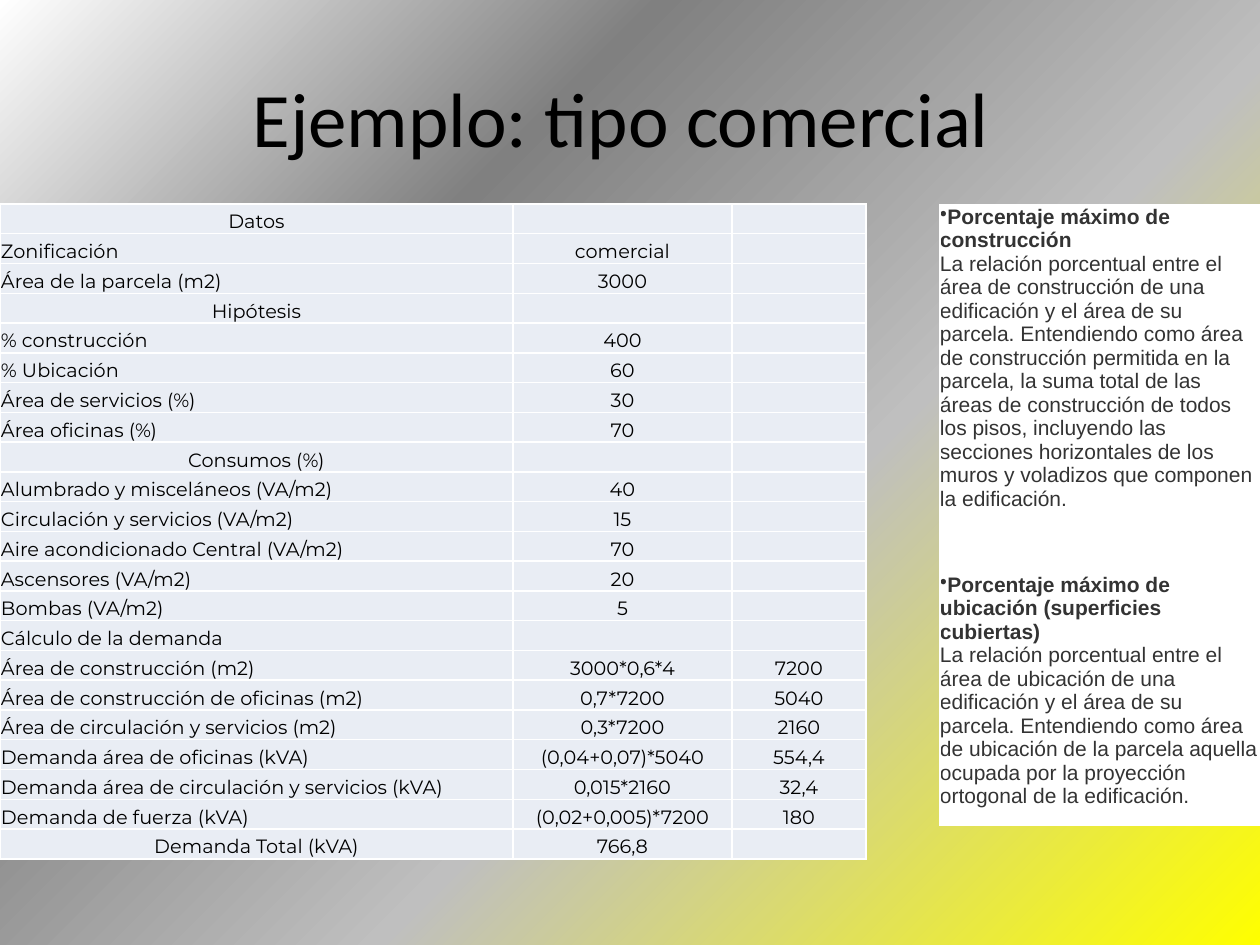
from copy import deepcopy

from pptx import Presentation
from pptx.dml.color import RGBColor
from pptx.enum.text import MSO_ANCHOR as Anchor, PP_ALIGN as Align
from pptx.oxml import parse_xml
from pptx.oxml.ns import nsdecls
from pptx.util import Emu, Pt

SCALE = 914400 / 126
COLORS = {
    "black": "000000", "white": "FFFFFF", "text": "333333", "cell": "E9EDF4",
    "yellow": "FFFF00", "silver": "BFBFBF", "gray": "808080",
}
TITLE_FONT = {"name": "Calibri", "size": Pt(44), "color": "black"}
DATA_FONT = {"name": "Montserrat", "size": Pt(11), "color": "black"}
NOTE_FONT = {"name": "Arial", "size": Pt(12), "color": "text"}

# A label written in centre alignment is a section heading.
HEADINGS = {"Datos", "Hipótesis", "Consumos (%)", "Demanda Total (kVA)"}
ROWS = [
    ("Datos", "", ""),
    ("Zonificación", "comercial", ""),
    ("Área de la parcela (m2)", "3000", ""),
    ("Hipótesis", "", ""),
    ("% construcción", "400", ""),
    ("% Ubicación", "60", ""),
    ("Área de servicios (%)", "30", ""),
    ("Área oficinas (%)", "70", ""),
    ("Consumos (%)", "", ""),
    ("Alumbrado y misceláneos (VA/m2)", "40", ""),
    ("Circulación y servicios (VA/m2)", "15", ""),
    ("Aire acondicionado Central (VA/m2)", "70", ""),
    ("Ascensores (VA/m2)", "20", ""),
    ("Bombas (VA/m2)", "5", ""),
    ("Cálculo de la demanda", "", ""),
    ("Área de construcción (m2)", "3000*0,6*4", "7200"),
    ("Área de construcción de oficinas (m2)", "0,7*7200", "5040"),
    ("Área de circulación y servicios (m2)", "0,3*7200", "2160"),
    ("Demanda área de oficinas (kVA)", "(0,04+0,07)*5040", "554,4"),
    ("Demanda área de circulación y servicios (kVA)", "0,015*2160", "32,4"),
    ("Demanda de fuerza (kVA)", "(0,02+0,005)*7200", "180"),
    ("Demanda Total (kVA)", "766,8", ""),
]
NOTES = [
    ("Porcentaje máximo de construcción",
     "La relación porcentual entre el área de construcción de una edificación y el área "
     "de su parcela. Entendiendo como área de construcción permitida en la parcela, la "
     "suma total de las áreas de construcción de todos los pisos, incluyendo las "
     "secciones horizontales de los muros y voladizos que componen la edificación."),
    ("Porcentaje máximo de ubicación (superficies cubiertas)",
     "La relación porcentual entre el área de ubicación de una edificación y el área de "
     "su parcela. Entendiendo como área de ubicación de la parcela aquella ocupada por "
     "la proyección ortogonal de la edificación."),
]


def px(*lengths):
    """Turn pixel lengths into a list of EMU lengths."""
    return [Emu(round(length * SCALE)) for length in lengths]


def add_run(paragraph, text, font_format, bold=False):
    run = paragraph.add_run()
    run.text = text
    for name, value in {**font_format, "bold": bold}.items():
        if name == "color":
            run.font.color.rgb = RGBColor.from_string(COLORS[value])
        else:
            setattr(run.font, name, value)
    return run


presentation = Presentation()
presentation.slide_width, presentation.slide_height = px(1260, 945)
slide = presentation.slides.add_slide(presentation.slide_layouts[6])

# Background gradient
stops = "".join(
    f'<a:gs pos="{position * 1000}"><a:srgbClr val="{COLORS[color]}"/></a:gs>'
    for position, color in [(0, "yellow"), (40, "silver"), (70, "gray"), (100, "white")]
)
slide._element.cSld.insert(0, parse_xml(
    f'<p:bg {nsdecls("p", "a")}><p:bgPr><a:gradFill rotWithShape="1">'
    f'<a:gsLst>{stops}</a:gsLst>'
    '<a:path path="circle"><a:fillToRect l="100000" t="100000"/></a:path>'
    '</a:gradFill><a:effectLst/></p:bgPr></p:bg>'
))

# Title
title = slide.shapes.add_textbox(*px(63, 38, 1134, 158)).text_frame
title.word_wrap = True
title.vertical_anchor = Anchor.MIDDLE
title.paragraphs[0].alignment = Align.CENTER
add_run(title.paragraphs[0], "Ejemplo: tipo comercial ", TITLE_FONT)

# Load calculation table
data = slide.shapes.add_table(len(ROWS), 3, *px(0, 204, 866, 655)).table
data.first_row = data.horz_banding = False
for column, width in zip(data.columns, px(513, 219, 134)):
    column.width = width
cell_format = dict(zip(
    ("margin_left", "margin_top", "margin_right", "margin_bottom"), px(1, 1, 1, 0)
), vertical_anchor=Anchor.BOTTOM)
for row_index, row in enumerate(ROWS):
    for column_index, text in enumerate(row):
        cell = data.cell(row_index, column_index)
        for name, value in cell_format.items():
            setattr(cell, name, value)
        for side in ("lnL", "lnR", "lnT", "lnB"):
            cell._tc.get_or_add_tcPr().append(parse_xml(
                f'<a:{side} {nsdecls("a")} w="12700"><a:solidFill>'
                f'<a:srgbClr val="{COLORS["white"]}"/></a:solidFill></a:{side}>'
            ))
        cell.fill.solid()
        cell.fill.fore_color.rgb = RGBColor.from_string(COLORS["cell"])
        paragraph = cell.text_frame.paragraphs[0]
        centered = column_index > 0 or text in HEADINGS
        paragraph.alignment = Align.CENTER if centered else Align.LEFT
        if text:
            add_run(paragraph, text, DATA_FONT)
        else:  # keeps the empty row from growing to the default text size
            paragraph._p.get_or_add_endParaRPr().set("sz", "1100")

# Definitions table
definitions = slide.shapes.add_table(len(NOTES), 1, *px(940, 205, 319, 603)).table
definitions.first_row = definitions.horz_banding = False
for row, height in zip(definitions.rows, px(368, 235)):
    row.height = height
for row_index, (term, meaning) in enumerate(NOTES):
    cell = definitions.cell(row_index, 0)
    cell.margin_left = cell.margin_top = cell.margin_right = cell.margin_bottom = 0
    cell.fill.solid()
    cell.fill.fore_color.rgb = RGBColor.from_string(COLORS["white"])
    paragraph = cell.text_frame.paragraphs[0]
    properties = paragraph._p.get_or_add_pPr()
    properties.set("marL", "0")
    properties.set("indent", "0")
    properties.append(parse_xml(f'<a:buChar {nsdecls("a")} char="•"/>'))
    term_run = add_run(paragraph, term, NOTE_FONT, bold=True)
    paragraph.add_line_break()
    paragraph._p[-1].append(deepcopy(term_run._r.rPr))
    add_run(paragraph, meaning, NOTE_FONT)

presentation.save("out.pptx")
